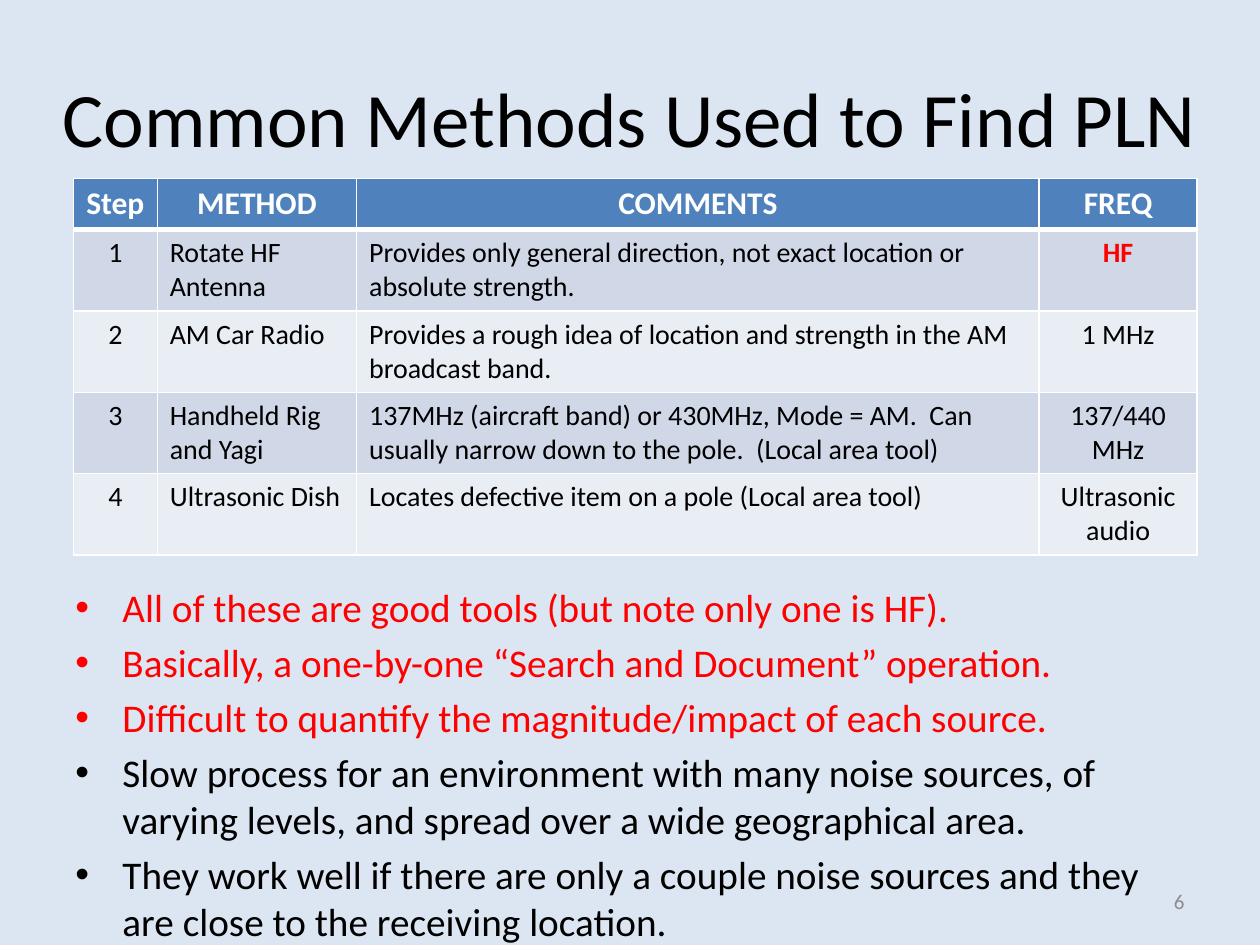
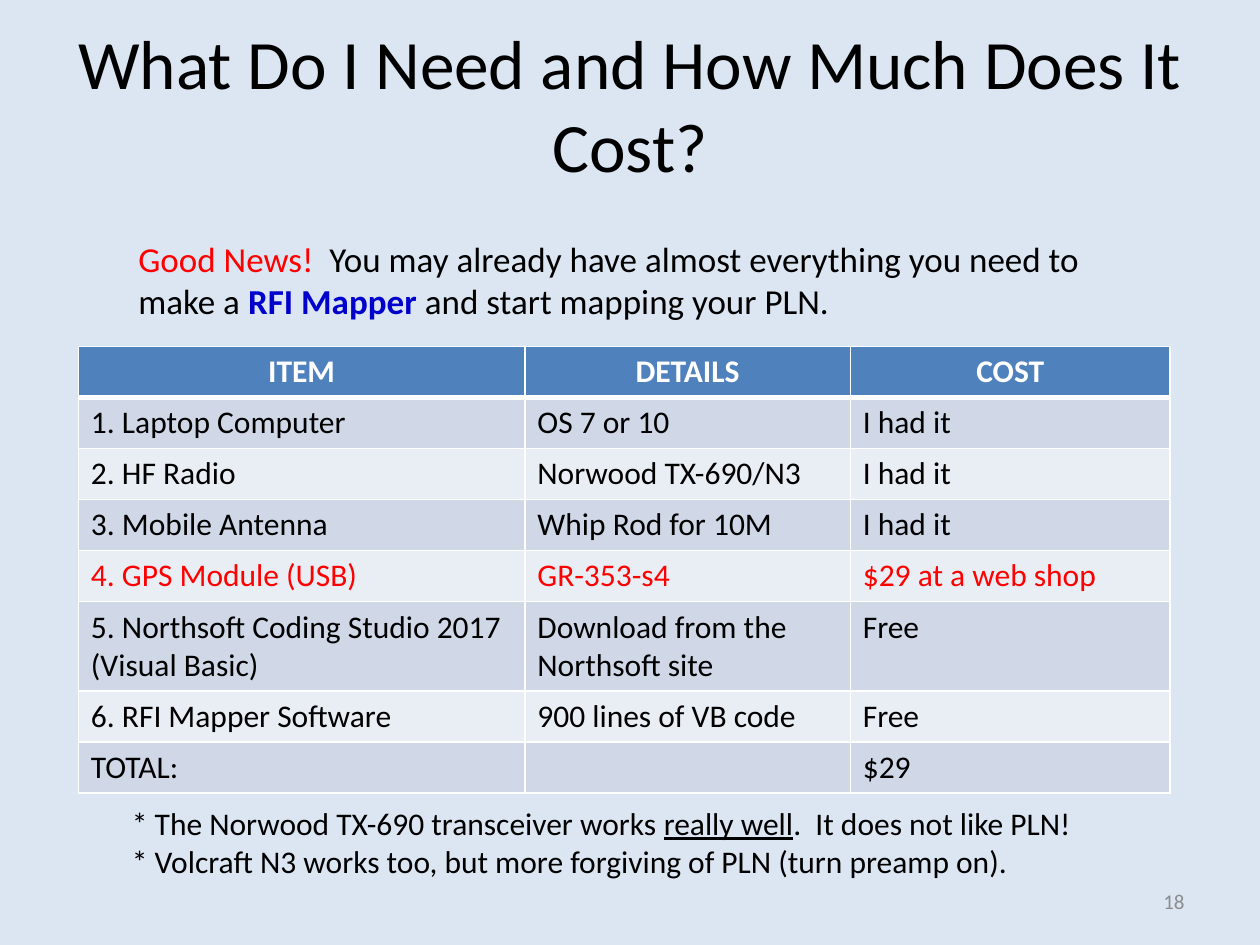
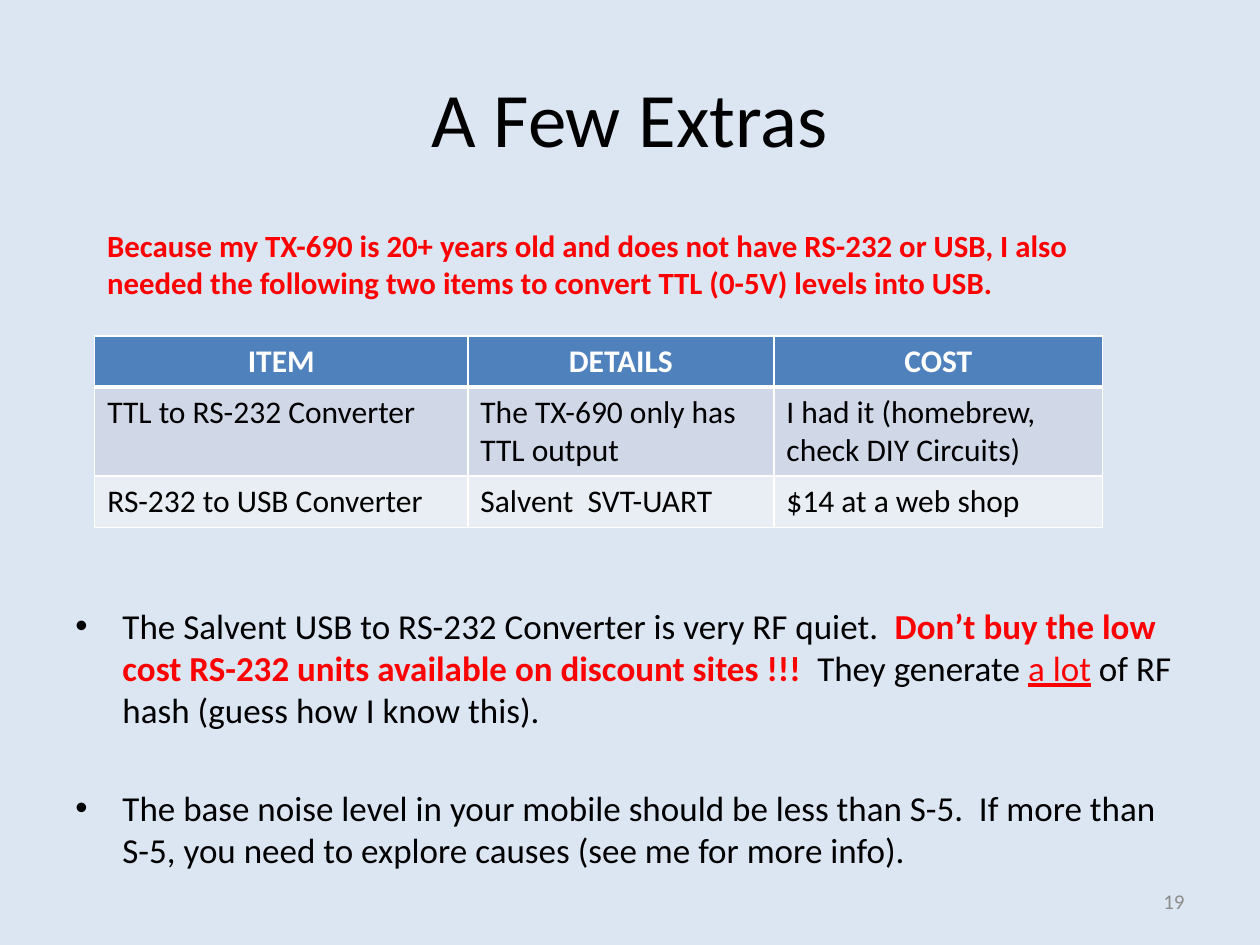
from typing import NamedTuple

from lxml.etree import SubElement
from pptx import Presentation
from pptx.dml.color import RGBColor
from pptx.enum.text import MSO_ANCHOR, PP_ALIGN
from pptx.oxml.ns import qn
from pptx.util import Cm, Pt

FONT = "Calibri"
BACKGROUND = "DCE6F2"
BLACK = "000000"
WHITE = "FFFFFF"
RED = "FF0000"
BLUE = "0000CC"
GRAY = "8C8C8C"
HEADER_FILL = "4F81BD"
BAND_FILLS = ("E9EDF4", "D0D8E8")
BULLET_INDENT = Cm(0.95)
HEADER_HEIGHT = 1.03
LINE_HEIGHT = 1.03
TWO_LINE_HEIGHT = 1.8


class Piece(NamedTuple):
    """A stretch of text with its own look."""
    text: str
    color: str = BLACK
    bold: bool = False
    underline: bool = False


def rgb(value):
    """Turn a hex string into a colour."""
    return RGBColor.from_string(value)


def pieces_of(content):
    """Return content as a list of pieces."""
    if isinstance(content, str):
        return [Piece(content)]
    return [content] if isinstance(content, Piece) else content


def write_paragraph(paragraph, content, size, align=PP_ALIGN.LEFT):
    """Write formatted pieces into a paragraph."""
    paragraph.alignment = align
    for piece in pieces_of(content):
        run = paragraph.add_run()
        run.text = piece.text
        run.font.name = FONT
        run.font.size = Pt(size)
        run.font.bold = piece.bold
        run.font.underline = piece.underline
        run.font.color.rgb = rgb(piece.color)


def add_bullet(paragraph):
    """Give a paragraph a hanging round bullet."""
    properties = paragraph._p.get_or_add_pPr()
    properties.set("marL", str(BULLET_INDENT))
    properties.set("indent", str(-BULLET_INDENT))
    SubElement(properties, qn("a:buFont"), typeface="Arial")
    SubElement(properties, qn("a:buChar"), char="•")


def add_text(slide, box, paragraphs, size, bulleted=False, gap=0,
             align=PP_ALIGN.LEFT, anchor=MSO_ANCHOR.TOP):
    """Add a wrapping text box with one or more paragraphs."""
    text_frame = slide.shapes.add_textbox(*map(Cm, box)).text_frame
    text_frame.word_wrap = True
    text_frame.vertical_anchor = anchor
    for index, content in enumerate(paragraphs):
        paragraph = text_frame.add_paragraph() if index else text_frame.paragraphs[0]
        if index:
            paragraph.space_before = Pt(gap)
        if bulleted:
            add_bullet(paragraph)
        write_paragraph(paragraph, content, size, align)


def set_borders(cell, top, bottom):
    """Draw white borders, with the given top and bottom widths in points."""
    properties = cell._tc.get_or_add_tcPr()
    for side, width in (("L", 1), ("R", 1), ("T", top), ("B", bottom)):
        line = SubElement(properties, qn(f"a:ln{side}"), w=str(Pt(width)))
        fill = SubElement(line, qn("a:solidFill"))
        SubElement(fill, qn("a:srgbClr"), val=WHITE)


def add_table(slide, left, top, widths, heights, rows, size=18, centered=()):
    """Add a banded table whose first row is the header."""
    frame = slide.shapes.add_table(len(rows), len(widths), Cm(left), Cm(top),
                                   Cm(sum(widths)), Cm(sum(heights)))
    table = frame.table
    for column, width in zip(table.columns, widths):
        column.width = Cm(width)
    for row_index, (row, height) in enumerate(zip(rows, heights)):
        table.rows[row_index].height = Cm(height)
        is_header = row_index == 0
        for column_index, content in enumerate(row):
            cell = table.cell(row_index, column_index)
            set_borders(cell, 3 if row_index == 1 else 1, 3 if is_header else 1)
            cell.fill.solid()
            cell.fill.fore_color.rgb = rgb(HEADER_FILL if is_header else BAND_FILLS[row_index % 2])
            if not content:
                continue
            is_centered = is_header or column_index in centered
            write_paragraph(cell.text_frame.paragraphs[0],
                            Piece(content, WHITE, True) if is_header else content,
                            18 if is_header else size,
                            PP_ALIGN.CENTER if is_centered else PP_ALIGN.LEFT)


def add_slide(presentation, title, number, box=(1.27, 0.76, 22.86, 3.18), size=44):
    """Add a titled slide with its number at the lower right."""
    slide = presentation.slides.add_slide(presentation.slide_layouts[5])
    shape = slide.shapes.title
    shape.left, shape.top, shape.width, shape.height = map(Cm, box)
    shape.text_frame.vertical_anchor = MSO_ANCHOR.MIDDLE
    write_paragraph(shape.text_frame.paragraphs[0], title, size, PP_ALIGN.CENTER)
    add_text(slide, (18.2, 17.66, 5.93, 1.01), [Piece(number, GRAY)], 12,
             align=PP_ALIGN.RIGHT, anchor=MSO_ANCHOR.MIDDLE)
    return slide


def add_methods_slide(presentation):
    """Build the slide on common methods."""
    slide = add_slide(presentation, "Common Methods Used to Find PLN", "6",
                      box=(0.85, 0.76, 23.7, 3.18))
    add_text(slide, (1.27, 11.64, 22.86, 6.22), [
        Piece("All of these are good tools (but note only one is HF).", RED),
        Piece("Basically, a one-by-one “Search and Document” operation.", RED),
        Piece("Difficult to quantify the magnitude/impact of each source.", RED),
        "Slow process for an environment with many noise sources, of varying levels, "
        "and spread over a wide geographical area.",
        "They work well if there are only a couple noise sources and they are close "
        "to the receiving location.",
    ], 22.4, bulleted=True, gap=4.5)
    add_table(slide, 1.48, 3.6, (1.69, 4.02, 13.76, 3.18),
              [HEADER_HEIGHT] + [1.64] * 4, [
        ("Step", "METHOD", "COMMENTS", "FREQ"),
        ("1", "Rotate HF Antenna",
         "Provides only general direction, not exact location or absolute strength.",
         Piece("HF", RED, True)),
        ("2", "AM Car Radio",
         "Provides a rough idea of location and strength in the AM broadcast band.",
         "1 MHz"),
        ("3", "Handheld Rig and Yagi",
         "137MHz (aircraft band) or 430MHz, Mode = AM.  Can usually narrow down "
         "to the pole.  (Local area tool)", "137/440 MHz"),
        ("4", "Ultrasonic Dish", "Locates defective item on a pole (Local area tool)",
         "Ultrasonic audio"),
    ], size=16, centered=(0, 3))


def add_cost_slide(presentation):
    """Build the slide on needed items and their cost."""
    slide = add_slide(presentation, "What Do I Need and How Much Does It Cost?", "18",
                      box=(1.27, 0.78, 22.86, 2.62), size=39.6)
    gps_row = ("4. GPS Module (USB)", "GR-353-s4", "$29 at a web shop")
    add_table(slide, 1.58, 6.98, (9, 6.56, 6.45),
              [HEADER_HEIGHT] + [LINE_HEIGHT] * 4 + [TWO_LINE_HEIGHT] + [LINE_HEIGHT] * 2, [
        ("ITEM", "DETAILS", "COST"),
        ("1. Laptop Computer", "OS 7 or 10", "I had it"),
        ("2. HF Radio", "Norwood TX-690/N3", "I had it"),
        ("3. Mobile Antenna", "Whip Rod for 10M", "I had it"),
        [Piece(text, RED) for text in gps_row],
        ("5. Northsoft Coding Studio 2017 (Visual Basic)",
         "Download from the Northsoft site", "Free"),
        ("6. RFI Mapper Software", "900 lines of VB code", "Free"),
        ("TOTAL:", "", "$29"),
    ])
    add_text(slide, (2.54, 4.66, 20.11, 1.7), [[
        Piece("Good News!", RED),
        Piece("  You may already have almost everything you need to make a "),
        Piece("RFI Mapper ", BLUE, True),
        Piece("and start mapping your PLN."),
    ]], 20)
    add_text(slide, (2.41, 16.08, 20.24, 1.8), [
        [Piece("* The Norwood TX-690 transceiver works "),
         Piece("really well", underline=True),
         Piece(".  It does not like PLN!")],
        "* Volcraft N3 works too, but more forgiving of PLN (turn preamp on).",
    ], 18)


def add_extras_slide(presentation):
    """Build the slide on extra items."""
    slide = add_slide(presentation, "A Few Extras", "19")
    add_text(slide, (1.27, 12.06, 22.86, 5.08), [
        [Piece("The Salvent USB to RS-232 Converter is very RF quiet.  "),
         Piece("Don’t buy the low cost RS-232 units available on discount sites !!!  ",
               RED, True),
         Piece("They generate "),
         Piece("a lot", RED, underline=True),
         Piece(" of RF hash (guess how I know this).")],
        "The base noise level in your mobile should be less than S-5.  If more than S-5, "
        "you need to explore causes (see me for more info).",
    ], 20, bulleted=True, gap=32)
    add_table(slide, 1.91, 6.77, (7.52, 6.17, 6.63),
              (HEADER_HEIGHT, TWO_LINE_HEIGHT, LINE_HEIGHT), [
        ("ITEM", "DETAILS", "COST"),
        ("TTL to RS-232 Converter", "The TX-690 only has TTL output",
         "I had it (homebrew, check DIY Circuits)"),
        ("RS-232 to USB Converter", "Salvent  SVT-UART", "$14 at a web shop"),
    ])
    add_text(slide, (1.91, 4.44, 20.11, 1.88), [Piece(
        "Because my TX-690 is 20+ years old and does not have RS-232 or USB, I also "
        "needed the following two items to convert TTL (0-5V) levels into USB.",
        RED, True)], 17.6)


def main():
    """Build and save the presentation."""
    presentation = Presentation()
    presentation.slide_width = Cm(25.4)
    presentation.slide_height = Cm(19.05)
    background = presentation.slide_master.background.fill
    background.solid()
    background.fore_color.rgb = rgb(BACKGROUND)
    add_methods_slide(presentation)
    add_cost_slide(presentation)
    add_extras_slide(presentation)
    presentation.save("out.pptx")


if __name__ == "__main__":
    main()
